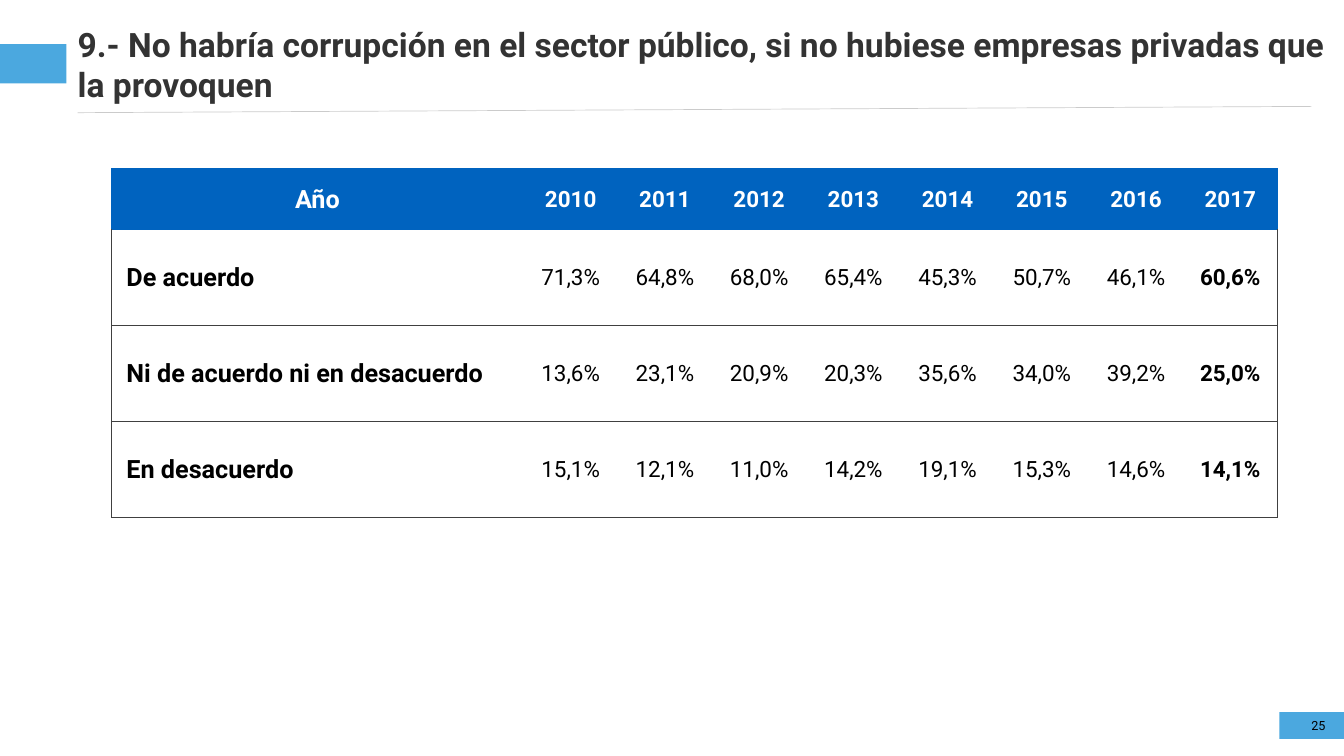
from lxml.etree import SubElement
from pptx import Presentation
from pptx.dml.color import RGBColor
from pptx.enum.shapes import MSO_CONNECTOR, MSO_SHAPE
from pptx.enum.text import MSO_ANCHOR, PP_ALIGN
from pptx.oxml.ns import qn
from pptx.util import Pt

HUES = {"sky": "4BA8DF", "head": "0063BF", "title": "333333", "rule": "CBCBCB",
        "grid": "404040", "black": "000000", "white": "FFFFFF"}
TITLE = ("9.- No habría corrupción en el sector público, "
         "si no hubiese empresas privadas que la provoquen")
YEARS = [str(year) for year in range(2010, 2018)]
ROWS = [
    ("De acuerdo", "71,3% 64,8% 68,0% 65,4% 45,3% 50,7% 46,1% 60,6%"),
    ("Ni de acuerdo ni en desacuerdo",
     "13,6% 23,1% 20,9% 20,3% 35,6% 34,0% 39,2% 25,0%"),
    ("En desacuerdo", "15,1% 12,1% 11,0% 14,2% 19,1% 15,3% 14,6% 14,1%"),
]


def rgb(hue):
    return RGBColor.from_string(HUES[hue])


def put(item, form):
    for name, value in form.items():
        setattr(item, name, value)


def write(para, text, size, hue, bold=False, align=PP_ALIGN.LEFT):
    para.alignment = align
    run = para.add_run()
    run.text = text
    put(run.font, {"name": "Roboto", "size": Pt(size), "bold": bold})
    run.font.color.rgb = rgb(hue)


def add_text(slide, left, top, width, height):
    frame = slide.shapes.add_textbox(Pt(left), Pt(top), Pt(width), Pt(height)).text_frame
    put(frame, {"margin_left": 0, "margin_right": 0, "margin_top": 0,
                "margin_bottom": 0, "word_wrap": True,
                "vertical_anchor": MSO_ANCHOR.MIDDLE})
    return frame.paragraphs[0]


def add_bar(slide, left, top, width, height):
    bar = slide.shapes.add_shape(MSO_SHAPE.RECTANGLE, Pt(left), Pt(top),
                                 Pt(width), Pt(height))
    bar.shadow.inherit = False
    bar.fill.solid()
    bar.fill.fore_color.rgb = rgb("sky")
    bar.line.fill.background()


def add_edges(cell, edges):
    """Draw the named sides (L, R, T, B) and clear the others."""
    props = cell._tc.get_or_add_tcPr()
    for spot, side in enumerate("LRTB"):
        line = props.makeelement(qn(f"a:ln{side}"), {"w": str(Pt(0.75))})
        props.insert(spot, line)
        if side in edges:
            fill = SubElement(line, qn("a:solidFill"))
            SubElement(fill, qn("a:srgbClr"), val=HUES[edges[side]])
        else:
            SubElement(line, qn("a:noFill"))


def add_head(slide, left, top, width, height):
    # Accent bar, title and thin rule
    add_bar(slide, 0, top + 30, left - 16, 56)
    write(add_text(slide, left, top, width, height), TITLE, 48, "title", True)
    rule = slide.shapes.add_connector(MSO_CONNECTOR.STRAIGHT, Pt(left), Pt(top + 128),
                                      Pt(left + 1762.5), Pt(top + 119))
    rule.line.color.rgb = rgb("rule")
    rule.line.width = Pt(1)
    SubElement(rule._element.spPr, qn("a:effectLst"))


def add_grid(slide, left, top, width, height):
    data = [["Año", *YEARS]] + [[label, *text.split()] for label, text in ROWS]
    count, last = len(data), len(YEARS)
    table = slide.shapes.add_table(count, last + 1, Pt(left), Pt(top),
                                   Pt(width), Pt(height)).table
    put(table, {"first_row": False, "horz_banding": False})

    # Wide label column and tall body rows
    first, head = 589, 86.4
    for col, column in enumerate(table.columns):
        column.width = Pt((width - first) / last if col else first)
    for row, band in enumerate(table.rows):
        band.height = Pt((height - head) / (count - 1) if row else head)

    for row, values in enumerate(data):
        for col, text in enumerate(values):
            cell = table.cell(row, col)
            put(cell, {"margin_left": Pt(3.6), "margin_right": Pt(3.6),
                       "margin_top": 0, "margin_bottom": 0,
                       "vertical_anchor": MSO_ANCHOR.MIDDLE})
            cell.fill.solid()
            cell.fill.fore_color.rgb = rgb("white" if row else "head")
            hue = "grid" if row else "head"
            edges = {"T": "grid" if row > 1 else "head", "B": hue}
            if col == 0:
                edges["L"] = hue
            if col == last:
                edges["R"] = hue
            add_edges(cell, edges)

            para = cell.text_frame.paragraphs[0]
            para.line_spacing = 1.07
            label = row > 0 and col == 0
            if label:
                # First-line indent of the row labels
                props = para._p.get_or_add_pPr()
                props.set("marL", "0")
                props.set("indent", str(Pt(18)))
            write(para, text, 32 if col else 36, "black" if row else "white",
                  row == 0 or col in (0, last),
                  PP_ALIGN.LEFT if label else PP_ALIGN.CENTER)


def add_foot(slide, left, top, width, height):
    # Page number on its bar
    add_bar(slide, left, top, width, height)
    para = add_text(slide, left + 26, top + 8, 40, 21.6)
    write(para, "25", 18, "black", align=PP_ALIGN.RIGHT)


def main():
    deck = Presentation()
    put(deck, {"slide_width": Pt(1920), "slide_height": Pt(1080)})
    slide = deck.slides.add_slide(deck.slide_layouts[6])
    add_head(slide, 111, 33, 1788.5, 117)
    add_foot(slide, 1827.5, 1017.5, 92.5, 38)
    add_grid(slide, 159, 240.5, 1666, 498.5)
    deck.save("out.pptx")


if __name__ == "__main__":
    main()
